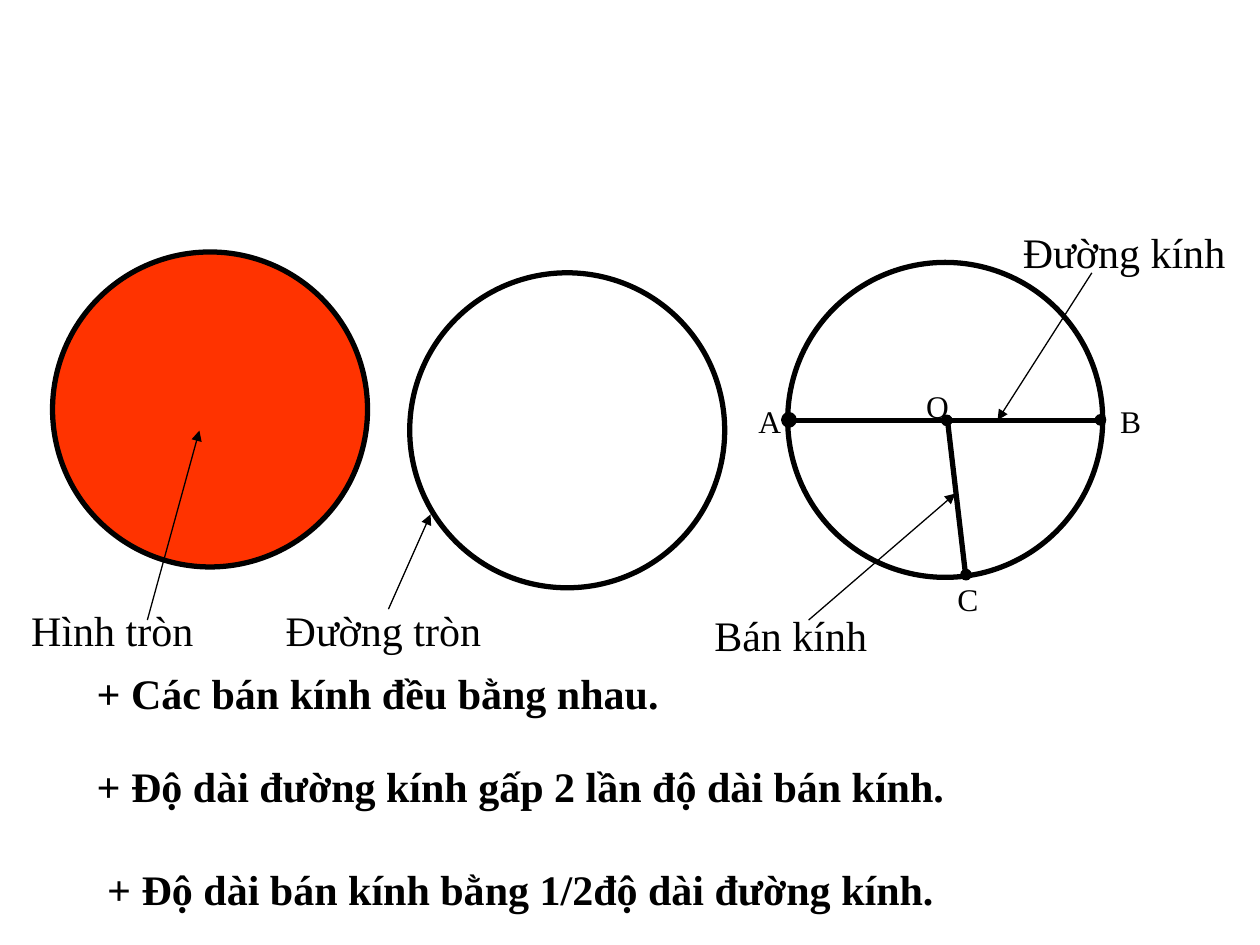
from pptx import Presentation
from pptx import util as u
from pptx.dml.color import RGBColor
from pptx.enum import shapes, text
from pptx.oxml.ns import qn
from lxml import etree

FONT = "Times New Roman"
BLACK = "000000"
SIZE = 6.35
DOT = 0.21


def paint(color, code):
    color.rgb = RGBColor.from_string(code)


def add_round(slide, kind, left, top, size, fill=None, width=3):
    item = slide.shapes.add_shape(
        kind, u.Cm(left), u.Cm(top), u.Cm(size), u.Cm(size))
    item.shadow.inherit = False
    if fill:
        item.fill.solid()
        paint(item.fill.fore_color, fill)
    else:
        item.fill.background()
    paint(item.line.color, BLACK)
    item.line.width = u.Pt(width)


def add_circle(slide, left, top, fill=None):
    add_round(slide, shapes.MSO_SHAPE.OVAL, left, top, SIZE, fill)


def add_dot(slide, left, top, width=0.75):
    kind = shapes.MSO_SHAPE.FLOWCHART_CONNECTOR
    add_round(slide, kind, left, top, DOT, BLACK, width)


def add_line(slide, start, end, width=3):
    line = slide.shapes.add_connector(
        shapes.MSO_CONNECTOR.STRAIGHT, *map(u.Cm, start + end))
    paint(line.line.color, BLACK)
    line.line.width = u.Pt(width)
    etree.SubElement(line._element.spPr, qn("a:effectLst"))
    return line


def add_arrow(slide, start, end):
    line = add_line(slide, start, end, 0.75)
    tail = etree.SubElement(line.line._get_or_add_ln(), qn("a:tailEnd"))
    tail.set("type", "triangle")


def add_text(slide, lines, left, top, width, height, size=24,
             bold=False, wrap=False):
    box = slide.shapes.add_textbox(*map(u.Cm, (left, top, width, height)))
    frame = box.text_frame
    frame.word_wrap = wrap
    frame.text = "\n".join(lines)
    for para in frame.paragraphs:
        font = para.runs[0].font
        font.name = FONT
        font.size = u.Pt(size)
        font.bold = bold
        paint(font.color, BLACK)
    return frame


def add_labels(slide):
    names = [
        ("Hình tròn", 0.38, 12.07, 3.81),
        ("Đường tròn", 5.51, 12.07, 4.5),
        ("Đường kính", 20.37, 4.45, 4.65),
        ("Bán kính", 14.15, 12.17, 3.84),
    ]
    for name, left, top, width in names:
        add_text(slide, [name], left, top, width, 1.27)

    points = [("O", 18.42, 7.67), ("A", 15.04, 7.98),
              ("B", 22.33, 7.98), ("C", 19.05, 11.56)]
    for name, left, top in points:
        add_text(slide, [name], left, top, 0.95, 1.02, size=18)


def add_rules(slide):
    add_text(slide, ["+ Các bán kính đều bằng nhau."],
             1.7, 13.34, 12.7, 1.27, bold=True, wrap=True)
    frame = add_text(slide, ["+ Độ dài đường kính gấp 2 lần độ dài bán kính.",
                             "+ Độ dài bán kính bằng 1/2độ dài đường kính."],
                     1.7, 15.2, 18.42, 4.37, bold=True, wrap=True)
    frame.vertical_anchor = text.MSO_ANCHOR.TOP
    last = frame.paragraphs[1]
    last.space_before = u.Pt(30)
    last._p.get_or_add_pPr().set("marL", str(u.Pt(6)))


def main():
    deck = Presentation()
    deck.slide_width, deck.slide_height = u.Cm(25.4), u.Cm(19.05)
    slide = deck.slides.add_slide(deck.slide_layouts[6])

    add_circle(slide, 1.06, 5.08, "FF3300")
    add_circle(slide, 8.26, 5.5)
    add_circle(slide, 15.88, 5.29)

    add_line(slide, (15.82, 8.47), (22.18, 8.47))
    add_line(slide, (19.1, 8.47), (19.47, 11.63))
    for left, top in [(18.98, 8.37), (22.08, 8.36), (19.37, 11.48)]:
        add_dot(slide, left, top)
    add_dot(slide, 15.8, 8.36, width=3)

    arrows = [
        ((2.97, 12.5), (4.02, 8.68)),
        ((7.83, 12.28), (8.68, 10.37)),
        ((22.01, 5.5), (20.11, 8.47)),
        ((16.3, 12.5), (19.26, 9.95)),
    ]
    for start, end in arrows:
        add_arrow(slide, start, end)

    add_labels(slide)
    add_rules(slide)
    deck.save("out.pptx")


if __name__ == "__main__":
    main()
